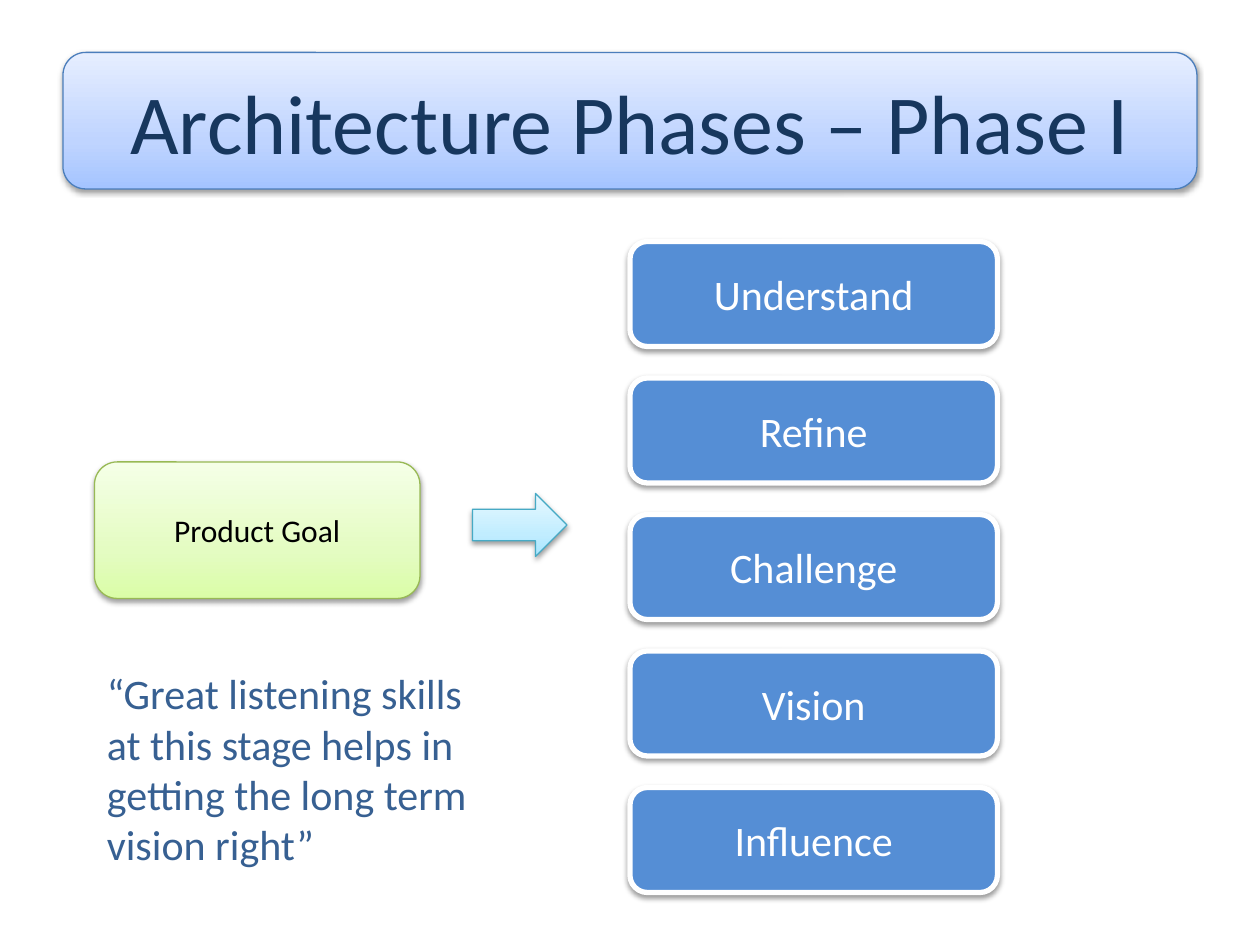
from copy import deepcopy

from lxml.etree import SubElement
from pptx import Presentation
from pptx.dml.color import RGBColor
from pptx.enum.shapes import MSO_SHAPE as Shape
from pptx.enum.text import MSO_ANCHOR as Anchor, PP_ALIGN as Align
from pptx.oxml.ns import qn
from pptx.util import Inches, Pt

COLUMNS, ROWS = 120, 90  # grid cells across and down the slide
WIDTH, HEIGHT = Inches(10), Inches(7.5)
FONT = "Calibri"
COLORS = {
    "title": "17375E",
    "quote": "376092",
    "black": "000000",
    "white": "FFFFFF",
    "step": "558ED5",
    "blue line": "4B7EBC",
    "green line": "98B955",
    "aqua line": "46AAC5",
}
GRADIENTS = {
    "blue": ("A4C4FF", "BFD4FF", "E6EEFF"),
    "green": ("DAFDA7", "E4FCC2", "F5FFE7"),
    "aqua": ("A7E6FF", "C1EDFF", "E7F8FF"),
}
STOP_POSITIONS = (0, 0.35, 1)
STEPS = ("Understand", "Refine", "Challenge", "Vision", "Influence")
STEP_PITCH = 13


def rgb(name):
    return RGBColor.from_string(COLORS[name])


def place(column, row, columns, rows):
    """Turn grid cells into left, top, width and height."""
    return (WIDTH * column // COLUMNS, HEIGHT * row // ROWS,
            WIDTH * columns // COLUMNS, HEIGHT * rows // ROWS)


def write(shape, text, size, color, align=Align.CENTER, anchor=Anchor.MIDDLE):
    frame = shape.text_frame
    frame.text = text
    frame.word_wrap = True
    frame.vertical_anchor = anchor
    para = frame.paragraphs[0]
    para.alignment = align
    font = para.runs[0].font
    font.name, font.size = FONT, Pt(size)
    font.color.rgb = rgb(color)


def fill_gradient(shape, name):
    """Blend three colours from the bottom edge to the top edge."""
    fill = shape.fill
    fill.gradient()
    fill.gradient_angle = 90
    stops = shape._element.spPr.find(qn("a:gradFill")).find(qn("a:gsLst"))
    stops.append(deepcopy(stops[0]))
    for stop, position, color in zip(fill.gradient_stops, STOP_POSITIONS, GRADIENTS[name]):
        stop.position = position
        stop.color.rgb = RGBColor.from_string(color)


def add_shadow(shape):
    shape.shadow.inherit = False
    effects = shape._element.spPr.find(qn("a:effectLst"))
    shadow = SubElement(effects, qn("a:outerShdw"), blurRad="40000",
                        dist="20000", dir="5400000", rotWithShape="0")
    color = SubElement(shadow, qn("a:srgbClr"), val=COLORS["black"])
    SubElement(color, qn("a:alpha"), val="38000")


def add_block(page, kind, cells, line, line_width):
    block = page.shapes.add_shape(kind, *place(*cells))
    block.line.color.rgb = rgb(line)
    block.line.width = Pt(line_width)
    add_shadow(block)
    return block


def add_gradient_block(page, kind, cells, hue):
    block = add_block(page, kind, cells, f"{hue} line", 0.75)
    fill_gradient(block, hue)
    return block


def add_step(page, index, name):
    cells = (60, 23 + index * STEP_PITCH, 35, 10)
    step = add_block(page, Shape.ROUNDED_RECTANGLE, cells, "white", 3)
    step.fill.solid()
    step.fill.fore_color.rgb = rgb("step")
    write(step, name, 24, "white")


def add_quote(page, text):
    box = page.shapes.add_textbox(*place(9, 63, 40, 20.6))
    write(box, text, 24, "quote", Align.LEFT, Anchor.TOP)


def main():
    deck = Presentation()
    deck.slide_width, deck.slide_height = WIDTH, HEIGHT
    page = deck.slides.add_slide(deck.slide_layouts[6])

    title = add_gradient_block(page, Shape.ROUNDED_RECTANGLE, (6, 5, 108, 13), "blue")
    write(title, "Architecture Phases – Phase I", 48, "title")
    goal = add_gradient_block(page, Shape.ROUNDED_RECTANGLE, (9, 44, 31, 13), "green")
    write(goal, "Product Goal", 18, "black")
    for index, name in enumerate(STEPS):
        add_step(page, index, name)
    add_gradient_block(page, Shape.RIGHT_ARROW, (45, 47, 9, 6), "aqua")
    add_quote(page, "“Great listening skills at this stage helps in "
                    "getting the long term vision right”")

    deck.save("out.pptx")


if __name__ == "__main__":
    main()
